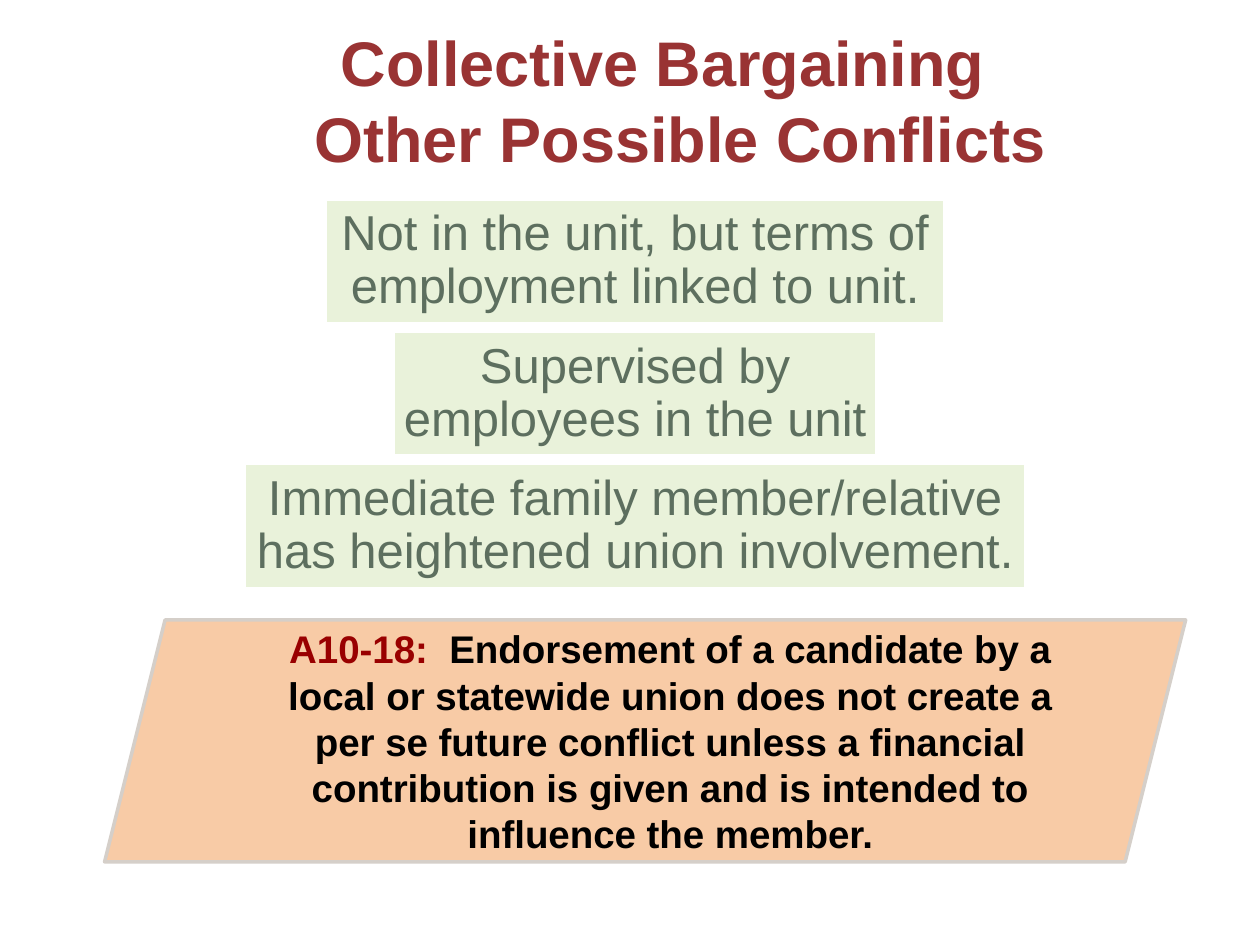
"""Build a slide on possible conflicts in collective bargaining."""
import pptx
import pptx.dml.color
import pptx.enum.shapes
import pptx.enum.text
import pptx.util
from pptx.util import Inches

SHAPES = pptx.enum.shapes.MSO_SHAPE
CENTER_X = 5.04
BOX_TOP = 1.58
BOX_HEIGHT = 0.99
BOX_STEP = 1.05
CONFLICTS = [
    ("Not in the unit, but terms of employment linked to unit.", 4.92),
    ("Supervised by employees in the unit", 3.84),
    ("Immediate family member/relative has heightened union involvement.", 6.2),
]


def color(value):
    return pptx.dml.color.RGBColor.from_string(value)


def format_text(shape, size, text_color, bold, insets):
    frame = shape.text_frame
    frame.word_wrap = True
    frame.vertical_anchor = pptx.enum.text.MSO_ANCHOR.MIDDLE
    (frame.margin_left, frame.margin_top,
     frame.margin_right, frame.margin_bottom) = map(Inches, insets)
    paragraph = frame.paragraphs[0]
    paragraph.alignment = pptx.enum.text.PP_ALIGN.CENTER
    paragraph.font.name = "Arial"
    paragraph.font.size = pptx.util.Pt(size)
    paragraph.font.bold = bold
    paragraph.font.color.rgb = color(text_color)
    return paragraph


def add_panel(slide, kind, bounds, fill, line):
    shape = slide.shapes.add_shape(kind, *map(Inches, bounds))
    shape.shadow.inherit = False
    shape.fill.solid()
    shape.fill.fore_color.rgb = color(fill)
    shape.line.color.rgb = color(line)
    shape.line.width = pptx.util.Pt(2)
    return shape


def add_title(slide):
    title = slide.shapes.add_textbox(*map(Inches, (1.12, 0.33, 8.42, 0.92)))
    title.text_frame.text = "Collective Bargaining \v Other Possible Conflicts"
    format_text(title, 36, "993333", True, (0.1, 0.05, 0.1, 0.05))


def add_opinion(slide):
    panel = add_panel(slide, SHAPES.PARALLELOGRAM, (0.83, 4.92, 8.58, 1.92),
                      "F8CBA6", "D5CFC9")
    paragraph = format_text(panel, 22, "000000", True, (0.5, 0.05, 0.1, 0.05))
    label = paragraph.add_run()
    label.text = "A10-18:\u00a0 "
    label.font.color.rgb = color("990000")
    paragraph.add_run().text = (
        "Endorsement of a candidate by a local or statewide union does not "
        "create a per se future conflict unless a financial contribution is "
        "given and is intended to influence the member.")


def add_conflict(slide, index, text, width):
    bounds = (CENTER_X - width / 2, BOX_TOP + index * BOX_STEP, width, BOX_HEIGHT)
    panel = add_panel(slide, SHAPES.RECTANGLE, bounds, "E9F2DA", "FFFFFF")
    panel.text_frame.text = text
    paragraph = format_text(panel, 28, "5D6F5F", False, (0.08,) * 4)
    paragraph.line_spacing = 0.9


def main():
    presentation = pptx.Presentation()
    presentation.slide_width = Inches(10)
    presentation.slide_height = Inches(7.5)
    slide = presentation.slides.add_slide(presentation.slide_layouts[6])
    add_title(slide)
    add_opinion(slide)
    for index, (text, width) in enumerate(CONFLICTS):
        add_conflict(slide, index, text, width)
    presentation.save("out.pptx")


if __name__ == "__main__":
    main()
